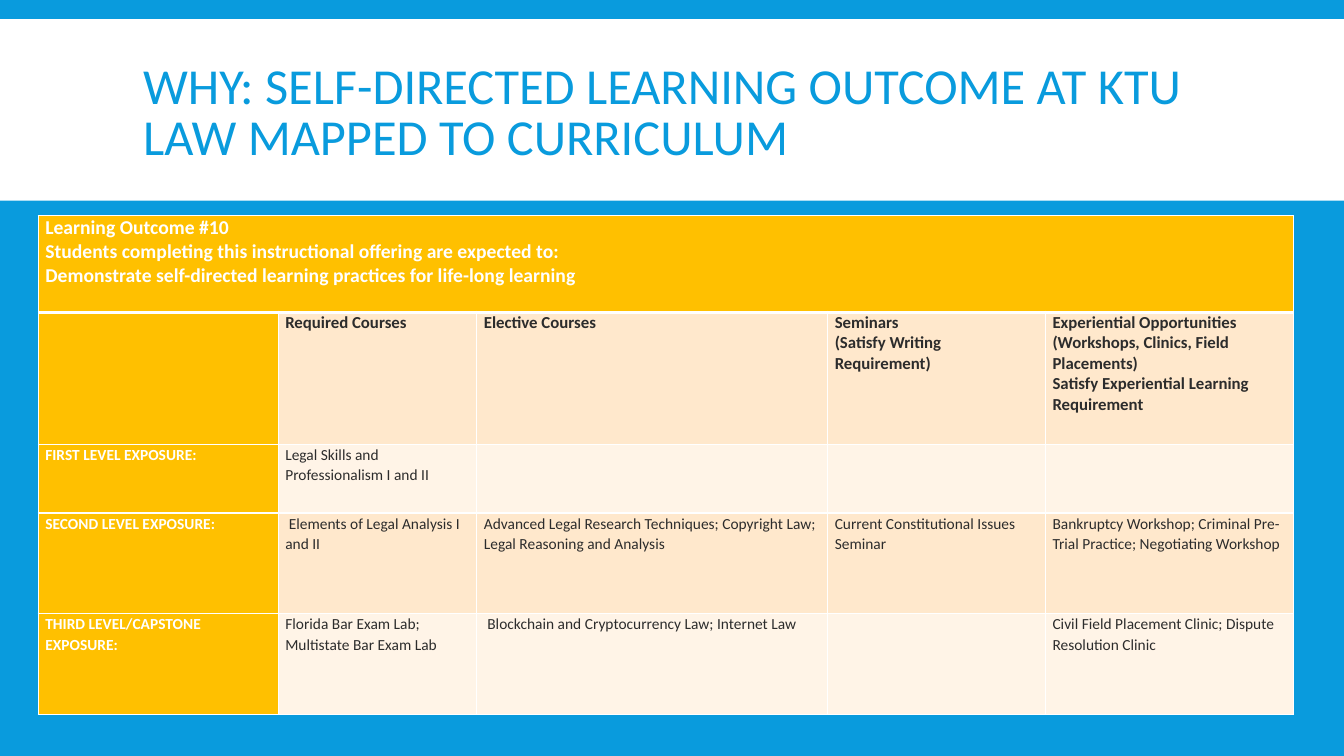
import pptx
import pptx.util
import pptx.dml.color
import pptx.enum.shapes
import pptx.enum.text
import pptx.oxml
import pptx.oxml.ns

Inches = pptx.util.Inches
Pt = pptx.util.Pt
RGBColor = pptx.dml.color.RGBColor

BLUE = RGBColor(0x09, 0x9B, 0xDD)
WHITE = RGBColor(0xFF, 0xFF, 0xFF)
GOLD = RGBColor(0xFF, 0xC0, 0x00)
PEACH = RGBColor(0xFF, 0xE8, 0xCC)
CREAM = RGBColor(0xFF, 0xF4, 0xE7)
DARK = RGBColor(0x2C, 0x2C, 0x2C)


def write_text(frame, text, size, color, bold=False, spacing=1.0):
    """Fill a text frame, one paragraph per line of text."""
    frame.text = text
    for paragraph in frame.paragraphs:
        paragraph.line_spacing = spacing
        paragraph.alignment = pptx.enum.text.PP_ALIGN.LEFT
        for run in paragraph.runs:
            run.font.name = "Calibri"
            run.font.size = Pt(size)
            run.font.bold = bold
            run.font.color.rgb = color


def format_cell(cell, fill, bottom_width=1):
    """Set the margins, white borders and fill of a table cell."""
    cell.margin_left = cell.margin_right = Inches(0.07)
    cell.margin_top = cell.margin_bottom = 0
    properties = cell._tc.get_or_add_tcPr()
    for side in ("lnL", "lnR", "lnT", "lnB"):
        width = Pt(bottom_width if side == "lnB" else 1)
        properties.append(pptx.oxml.parse_xml(
            f'<a:{side} {pptx.oxml.ns.nsdecls("a")} w="{width}"><a:solidFill>'
            f'<a:srgbClr val="{WHITE}"/></a:solidFill></a:{side}>'))
    cell.fill.solid()
    cell.fill.fore_color.rgb = fill


deck = pptx.Presentation()
deck.slide_width = Inches(13.33)
deck.slide_height = Inches(7.5)
slide = deck.slides.add_slide(deck.slide_layouts[5])
slide.background.fill.solid()
slide.background.fill.fore_color.rgb = BLUE

# Title on its white band
title = slide.shapes.title
title.left, title.top = Inches(1.32), Inches(0.31)
title.width, title.height = Inches(10.7), Inches(1.65)
title.text_frame.word_wrap = True
title.text_frame.auto_size = pptx.enum.text.MSO_AUTO_SIZE.NONE
title.text_frame.vertical_anchor = pptx.enum.text.MSO_ANCHOR.MIDDLE
write_text(title.text_frame,
           "WHY: SELF-DIRECTED LEARNING OUTCOME AT KTU LAW MAPPED TO CURRICULUM",
           size=36, color=BLUE, spacing=0.85)

band = slide.shapes.add_shape(pptx.enum.shapes.MSO_SHAPE.RECTANGLE,
                              0, Inches(0.19), Inches(13.33), Inches(1.8))
band.shadow.inherit = False
band.fill.solid()
band.fill.fore_color.rgb = WHITE
band.line.fill.background()
title.element.addprevious(band.element)

# Curriculum map
outcome = ("Learning Outcome #10\n"
           "Students completing this instructional offering are expected to:\n"
           "Demonstrate self-directed learning practices for life-long learning")
curriculum = [
    ["", "Required Courses", "Elective Courses",
     "Seminars\n(Satisfy Writing Requirement)",
     "Experiential Opportunities (Workshops, Clinics, Field Placements)\n"
     "Satisfy Experiential Learning Requirement"],
    ["FIRST LEVEL EXPOSURE:", "Legal Skills and Professionalism I and II", "", "", ""],
    ["SECOND LEVEL EXPOSURE:", " Elements of Legal Analysis I and II",
     "Advanced Legal Research Techniques; Copyright Law; Legal Reasoning and Analysis",
     "Current Constitutional Issues Seminar",
     "Bankruptcy Workshop; Criminal Pre-Trial Practice; Negotiating Workshop"],
    ["THIRD LEVEL/CAPSTONE\nEXPOSURE:", "Florida Bar Exam Lab; Multistate Bar Exam Lab",
     " Blockchain and Cryptocurrency Law; Internet Law", "",
     "Civil Field Placement Clinic; Dispute Resolution Clinic"],
]
column_widths = [2.38, 1.97, 3.48, 2.16, 2.46]
row_heights = [0.96, 1.31, 0.68, 1, 1]

table = slide.shapes.add_table(len(row_heights), len(column_widths), Inches(0.38),
                               Inches(2.14), Inches(12.45), Inches(4.95)).table
for column, width in zip(table.columns, column_widths):
    column.width = Inches(width)
for row, height in zip(table.rows, row_heights):
    row.height = Inches(height)

# Outcome row across all columns
for cell in table.rows[0].cells:
    format_cell(cell, GOLD, bottom_width=3)
table.cell(0, 0).merge(table.cell(0, len(column_widths) - 1))
write_text(table.cell(0, 0).text_frame, outcome, size=14, color=WHITE, bold=True)

# Column headings, then one row per exposure level
for r, entries in enumerate(curriculum, start=1):
    heading = r == 1
    for c, entry in enumerate(entries):
        cell = table.cell(r, c)
        level = c == 0
        format_cell(cell, GOLD if level else PEACH if r % 2 else CREAM)
        write_text(cell.text_frame, entry, size=12 if heading else 11,
                   color=WHITE if level else DARK, bold=heading or level,
                   spacing=1.0 if heading else 1.07)

deck.save("out.pptx")
